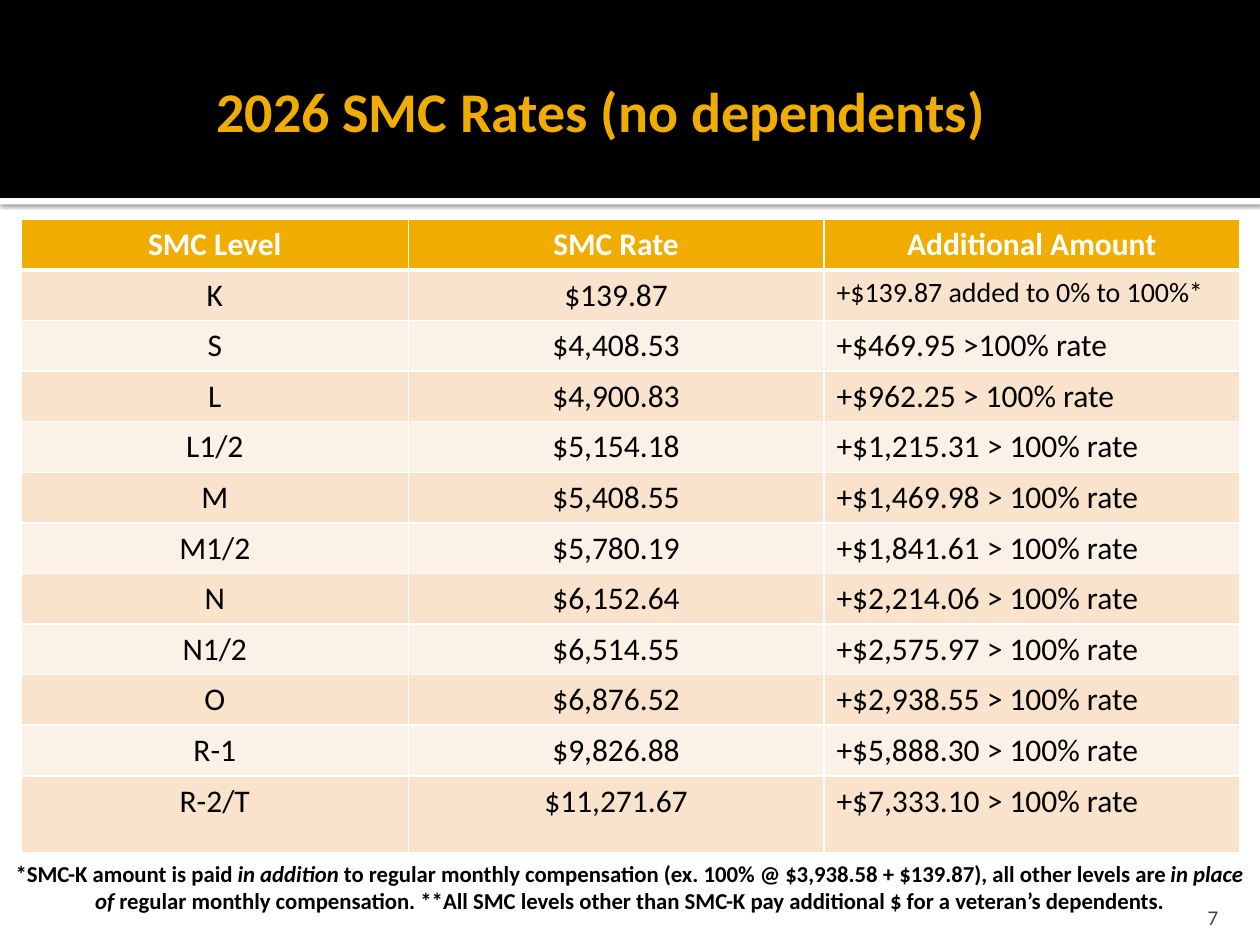
from lxml.etree import SubElement
from pptx import Presentation
from pptx.dml.color import RGBColor
from pptx.enum.shapes import MSO_SHAPE
from pptx.enum.text import MSO_ANCHOR, PP_ALIGN
from pptx.oxml.ns import qn
from pptx.util import Cm, Pt

BLACK, WHITE, GOLD, GREY = "000000", "FFFFFF", "F0AD00", "454545"
BANDS = ["F9E3CC", "FCF1E7"]
HEAD = ["SMC Level", "SMC Rate", "Additional Amount"]
RATES = [
    ["K", "$139.87", "+$139.87 added to 0% to 100%*"],
    ["S", "$4,408.53", "+$469.95 >100% rate"],
    ["L", "$4,900.83", "+$962.25 > 100% rate"],
    ["L1/2", "$5,154.18", "+$1,215.31 > 100% rate"],
    ["M", "$5,408.55", "+$1,469.98 > 100% rate"],
    ["M1/2", "$5,780.19", "+$1,841.61 > 100% rate"],
    ["N", "$6,152.64", "+$2,214.06 > 100% rate"],
    ["N1/2", "$6,514.55", "+$2,575.97 > 100% rate"],
    ["O", "$6,876.52", "+$2,938.55 > 100% rate"],
    ["R-1", "$9,826.88", "+$5,888.30 > 100% rate"],
    ["R-2/T", "$11,271.67", "+$7,333.10 > 100% rate"],
]
NOTE = [
    "*SMC-K amount is paid ",
    "in addition ",
    "to regular monthly compensation (ex. 100% @ $3,938.58 + $139.87), "
    "all other levels are ",
    "in place of ",
    "regular monthly compensation. **All SMC levels other than SMC-K pay "
    "additional $ for a veteran’s dependents.",
]


def color(code):
    return RGBColor.from_string(code)


def write(para, text, size=18, ink=BLACK, bold=False, slant=False,
          align=PP_ALIGN.CENTER, face="Calibri"):
    """Add one run to a paragraph."""
    para.alignment = align
    run = para.add_run()
    run.text = text
    font = run.font
    font.name, font.size = face, Pt(size)
    font.bold, font.italic = bold, slant
    font.color.rgb = color(ink)


def tint(parent, code, alpha=100):
    """Add an sRGB colour element."""
    node = SubElement(parent, qn("a:srgbClr"), val=code)
    if alpha < 100:
        SubElement(node, qn("a:alpha"), val=str(alpha * 1000))


def edge(cell, base):
    """Draw white borders round a cell."""
    props = cell._tc.get_or_add_tcPr()
    for side, width in zip("LRTB", (1, 1, 1, base)):
        line = SubElement(props, qn("a:ln" + side), w=str(Pt(width)))
        tint(SubElement(line, qn("a:solidFill")), WHITE)


class Deck:
    """Holds the slide and the shared style."""

    def __init__(self):
        self.show = Presentation()
        self.show.slide_width, self.show.slide_height = Cm(25.4), Cm(19.05)
        self.slide = self.show.slides.add_slide(self.show.slide_layouts[6])

    def rect(self, x, y, w, h, fill, shade=False):
        box = self.slide.shapes.add_shape(
            MSO_SHAPE.RECTANGLE, Cm(x), Cm(y), Cm(w), Cm(h))
        box.fill.solid()
        box.fill.fore_color.rgb = color(fill)
        box.line.fill.background()
        box.shadow.inherit = False
        if shade:
            glow = SubElement(
                box._element.spPr.find(qn("a:effectLst")), qn("a:outerShdw"),
                blurRad=str(Pt(2.5)), dist=str(Pt(0.8)), dir="5400000",
                algn="tl", rotWithShape="0")
            tint(glow, BLACK, 60)

    def text(self, x, y, w, h, anchor=MSO_ANCHOR.TOP):
        """Add a text box and return its frame."""
        frame = self.slide.shapes.add_textbox(
            Cm(x), Cm(y), Cm(w), Cm(h)).text_frame
        frame.word_wrap = True
        frame.vertical_anchor = anchor
        return frame

    def table(self, x, y, cols, rows, data):
        grid = self.slide.shapes.add_table(
            len(rows), len(cols), Cm(x), Cm(y),
            Cm(sum(cols)), Cm(sum(rows))).table
        for col, width in zip(grid.columns, cols):
            col.width = Cm(width)
        for row, height in zip(grid.rows, rows):
            row.height = Cm(height)
        for r, line in enumerate(data):
            top = r == 0
            for c, word in enumerate(line):
                cell = grid.cell(r, c)
                edge(cell, 3 if top else 1)
                cell.fill.solid()
                cell.fill.fore_color.rgb = color(
                    GOLD if top else BANDS[(r - 1) % 2])
                left = c == 2 and not top
                write(cell.text_frame.paragraphs[0], word,
                      size=16 if left and r == 1 else 18,
                      ink=WHITE if top else BLACK, bold=top,
                      align=PP_ALIGN.LEFT if left else PP_ALIGN.CENTER)


def main():
    deck = Deck()
    deck.rect(0, 3.99, 25.4, 0.13, WHITE, shade=True)
    deck.rect(0, 0, 25.4, 3.99, BLACK)

    title = deck.text(-0.43, 0.43, 24.97, 3.48, MSO_ANCHOR.MIDDLE)
    title.margin_right = Cm(0.13)
    para = title.paragraphs[0]
    para.line_spacing, para.space_after = 1.07, Pt(8)
    write(para, "2026 SMC Rates (no dependents)", size=32, ink=GOLD, bold=True)

    page = deck.text(22.78, 17.98, 2.03, 0.76, MSO_ANCHOR.BOTTOM)
    page.margin_bottom = 0
    write(page.paragraphs[0], "7", size=12, ink=GREY, align=PP_ALIGN.RIGHT)

    note = deck.text(0.05, 17.2, 25.27, 1.37).paragraphs[0]
    for i, part in enumerate(NOTE):
        write(note, part, size=13, bold=True, slant=i % 2 == 1)

    deck.table(0.43, 4.42, [7.8, 8.38, 8.38],
               [1.02] * len(RATES) + [1.55], [HEAD] + RATES)
    deck.show.save("out.pptx")


if __name__ == "__main__":
    main()
